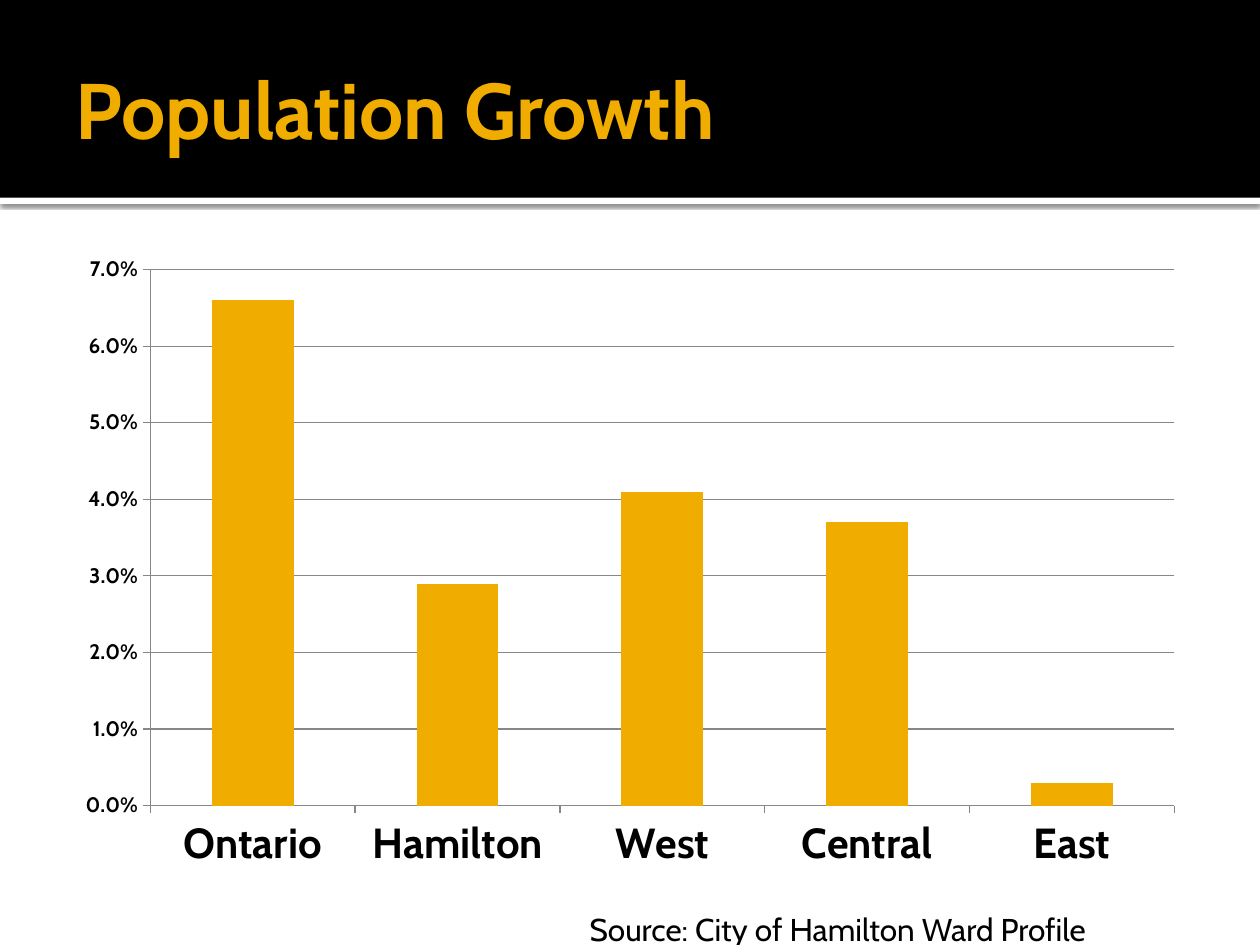
"""Build the Population Growth slide with its column chart."""
from dataclasses import dataclass

from lxml.etree import SubElement
from pptx import Presentation
from pptx.chart.data import CategoryChartData
from pptx.dml.color import RGBColor
from pptx.enum.chart import XL_CHART_TYPE as ChartType, XL_TICK_MARK as Tick
from pptx.enum.text import MSO_ANCHOR as Anchor
from pptx.enum.shapes import MSO_SHAPE as Shape
from pptx.oxml.ns import qn
from pptx.util import Pt

BLACK = RGBColor(0x00, 0x00, 0x00)
WHITE = RGBColor(0xFF, 0xFF, 0xFF)
GOLD = RGBColor(0xF0, 0xAD, 0x00)
GRAY = RGBColor(0x87, 0x87, 0x87)
FONT = "Cabin"
GROWTH = {"Ontario": 0.066, "Hamilton": 0.029, "West": 0.041,
          "Central": 0.037, "East": 0.003}


@dataclass(frozen=True)
class Box:
    left: float
    top: float
    width: float
    height: float

    def emu(self) -> tuple:
        return Pt(self.left), Pt(self.top), Pt(self.width), Pt(self.height)


@dataclass(frozen=True)
class Band:
    box: Box
    color: RGBColor
    shadow: bool = False


@dataclass(frozen=True)
class Label:
    box: Box
    text: str
    size: float
    color: RGBColor
    bold: bool = False
    right_inset: float = 7.2


BANDS = (
    Band(Box(0, 113, 720, 3.6), WHITE, shadow=True),
    Band(Box(0, 0, 720, 113), BLACK),
)
LABELS = (
    Label(Box(36, 12.2, 648, 98.6), "Population Growth", 45, GOLD, True, 3.6),
    Label(Box(329.8, 516.2, 342, 28.8),
          "Source: City of Hamilton Ward Profile", 18, BLACK),
)
CHART_BOX = Box(36, 139.7, 648, 364.3)


def set_font(font, size: float, color: RGBColor, bold: bool) -> None:
    font.name, font.size, font.bold = FONT, Pt(size), bold
    font.color.rgb = color


def add_shadow(sp) -> None:
    effects = sp._element.spPr.find(qn("a:effectLst"))
    shadow = SubElement(effects, qn("a:outerShdw"), blurRad=str(Pt(2.5)),
                        dist=str(Pt(0.8)), dir="5400000", rotWithShape="0")
    color = SubElement(shadow, qn("a:srgbClr"), val=str(BLACK))
    SubElement(color, qn("a:alpha"), val="60000")


def add_band(s, band: Band) -> None:
    sp = s.shapes.add_shape(Shape.RECTANGLE, *band.box.emu())
    sp.fill.solid()
    sp.fill.fore_color.rgb = band.color
    sp.line.fill.background()
    sp.shadow.inherit = False
    if band.shadow:
        add_shadow(sp)


def add_label(s, label: Label) -> None:
    tf = s.shapes.add_textbox(*label.box.emu()).text_frame
    tf.word_wrap = True
    tf.vertical_anchor = Anchor.MIDDLE
    tf.margin_right = Pt(label.right_inset)
    p = tf.paragraphs[0]
    p.text = label.text
    set_font(p.font, label.size, label.color, label.bold)


def style_axis(axis, size: float) -> None:
    axis.major_tick_mark = Tick.OUTSIDE
    axis.minor_tick_mark = Tick.NONE
    axis.format.line.color.rgb = GRAY
    axis.format.line.width = Pt(0.75)
    set_font(axis.tick_labels.font, size, BLACK, True)


def add_growth_chart(s) -> None:
    data = CategoryChartData(number_format="0.0%")
    data.categories = list(GROWTH)
    data.add_series("Series 1", list(GROWTH.values()))
    chart = s.shapes.add_chart(ChartType.COLUMN_CLUSTERED, *CHART_BOX.emu(), data).chart
    chart.has_legend = chart.has_title = False
    set_font(chart.font, 12, BLACK, True)
    style_axis(chart.category_axis, 24)

    axis = chart.value_axis
    style_axis(axis, 12)
    axis.minimum_scale, axis.maximum_scale, axis.major_unit = 0, 0.07, 0.01
    axis.tick_labels.number_format = "0.0%"
    axis.tick_labels.number_format_is_linked = False
    axis.has_major_gridlines = True
    axis.major_gridlines.format.line.color.rgb = GRAY
    axis.major_gridlines.format.line.width = Pt(0.75)

    plot = chart.plots[0]
    plot.gap_width = 150
    plot.vary_by_categories = False
    fill = plot.series[0].format.fill
    fill.solid()
    fill.fore_color.rgb = GOLD


def main() -> None:
    prs = Presentation()
    prs.slide_width, prs.slide_height = Pt(720), Pt(540)
    s = prs.slides.add_slide(prs.slide_layouts[6])
    for band in BANDS:
        add_band(s, band)
    add_growth_chart(s)
    for label in LABELS:
        add_label(s, label)
    prs.save("out.pptx")


if __name__ == "__main__":
    main()
